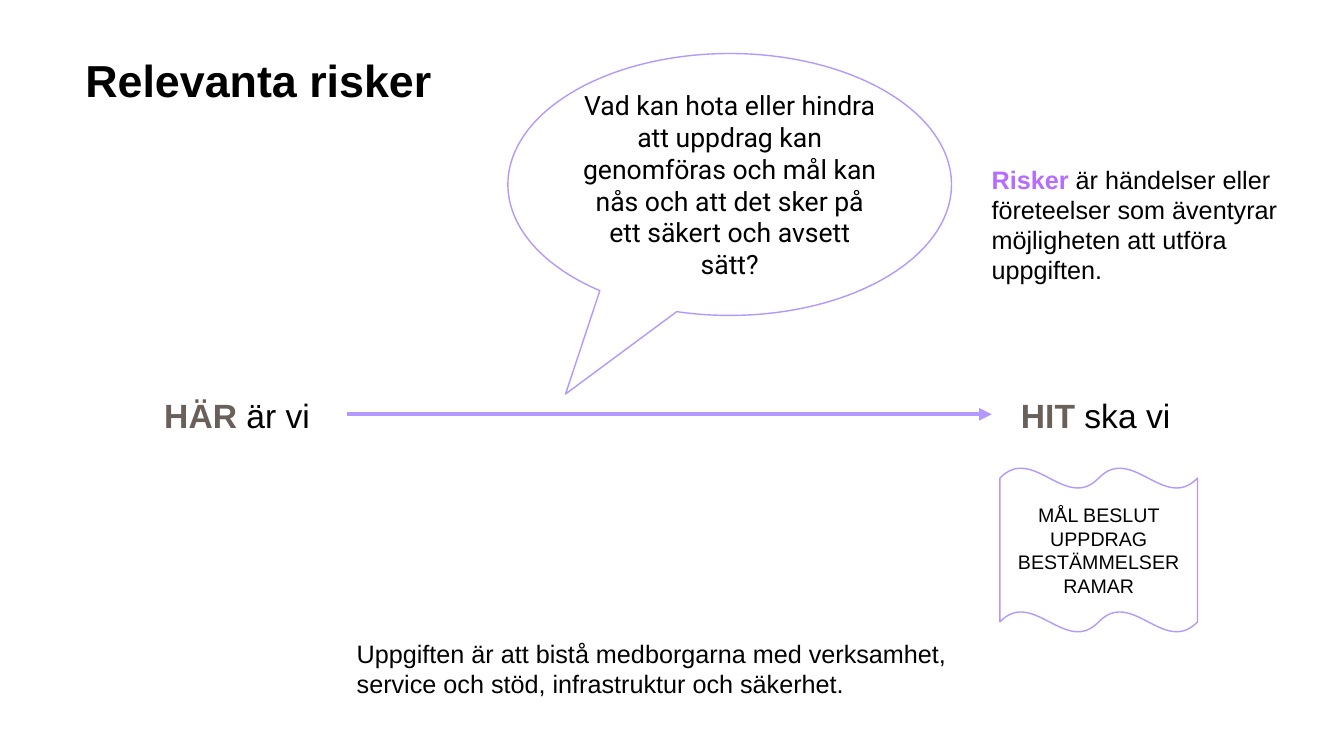
import pptx
import pptx.util
import pptx.dml.color
import pptx.enum.shapes
import pptx.enum.text
import pptx.oxml
import pptx.oxml.ns

Cm, Pt = pptx.util.Cm, pptx.util.Pt
RGB = pptx.dml.color.RGBColor.from_string
KIND = pptx.enum.shapes.MSO_SHAPE
LINE = pptx.enum.shapes.MSO_CONNECTOR
ALIGN = pptx.enum.text.PP_ALIGN
ANCHOR = pptx.enum.text.MSO_ANCHOR

THEME = {
    "font": "Arial", "talk": "Roboto",
    "ink": "000000", "edge": "B598FE", "risk": "B66DFF", "place": "6A605A",
    "title": 32, "stop": 24, "ask": 19, "body": 18, "goal": 14,
}

# Content: left, top, width, height in cm
# Texts: box, size, bold lead, lead colour, remaining text
TEXTS = [
    ((1.9, 1.3, 26.7, 1.96), "title", "Relevanta risker", "ink", ""),
    ((3.89, 9.83, 5, 1.22), "stop", "HÄR", "place", " är vi"),
    ((25.48, 9.83, 5, 1.22), "stop", "HIT", "place", " ska vi"),
    ((24.74, 4.01, 7.95, 4.11), "body", "Risker", "risk",
     " är händelser eller företeelser som äventyrar möjligheten"
     " att utföra uppgiften."),
    ((8.74, 15.95, 15.52, 1.8), "body", "", "ink",
     "Uppgiften är att bistå medborgarna med verksamhet,"
     " service och stöd, infrastruktur och säkerhet."),
]
# Shapes: kind, box, adjustments, size, font, text
SHAPES = [
    (KIND.OVAL_CALLOUT, (12.8, 1.35, 11.18, 6.6), (-0.37, 0.8), "ask", "talk",
     "Vad kan hota eller hindra att uppdrag kan genomföras och mål kan nås"
     " och att det sker på ett säkert och avsett sätt?"),
    (KIND.DOUBLE_WAVE, (25.2, 11.79, 4.98, 4.14), (), "goal", "font",
     "MÅL BESLUT UPPDRAG\nBESTÄMMELSER\nRAMAR"),
]
ARROW = (8.74, 10.44, 24.99, 10.44)


def style(run, size, color="ink", bold=False, font="font"):
    run.font.name = THEME[font]
    run.font.size = Pt(THEME[size])
    run.font.bold = bold
    run.font.color.rgb = RGB(THEME[color])


def add_text(slide, box, size, lead, color, rest):
    frame = slide.shapes.add_textbox(*map(Cm, box)).text_frame
    frame.word_wrap = True
    para = frame.paragraphs[0]
    if size == "title":
        para.line_spacing = 0.95
    for words, tint, bold in ((lead, color, True), (rest, "ink", False)):
        if words:
            run = para.add_run()
            run.text = words
            style(run, size, tint, bold)


def add_shape(slide, kind, box, adjust, size, font, words):
    shape = slide.shapes.add_shape(kind, *map(Cm, box))
    shape.shadow.inherit = False
    shape.fill.background()
    shape.line.color.rgb = RGB(THEME["edge"])
    shape.line.width = Pt(1)
    for i, value in enumerate(adjust):
        shape.adjustments[i] = value
    frame = shape.text_frame
    frame.word_wrap = True
    frame.vertical_anchor = ANCHOR.MIDDLE
    frame.text = words
    for para in frame.paragraphs:
        para.alignment = ALIGN.CENTER
        for run in para.runs:
            style(run, size, font=font)


def add_arrow(slide, ends):
    arrow = slide.shapes.add_connector(LINE.STRAIGHT, *map(Cm, ends))
    arrow.line.color.rgb = RGB(THEME["edge"])
    arrow.line.width = Pt(3)
    # Arrowhead and no shadow
    head = pptx.oxml.parse_xml(
        f'<a:tailEnd {pptx.oxml.ns.nsdecls("a")} type="triangle"/>')
    arrow.line._get_or_add_ln().append(head)
    arrow._element.spPr.append(pptx.oxml.parse_xml(
        f'<a:effectLst {pptx.oxml.ns.nsdecls("a")}/>'))


def main():
    deck = pptx.Presentation()
    deck.slide_width, deck.slide_height = Cm(33.87), Cm(19.05)
    slide = deck.slides.add_slide(deck.slide_layouts[6])
    add_arrow(slide, ARROW)
    for item in SHAPES:
        add_shape(slide, *item)
    for item in TEXTS:
        add_text(slide, *item)
    deck.save("out.pptx")


if __name__ == "__main__":
    main()
